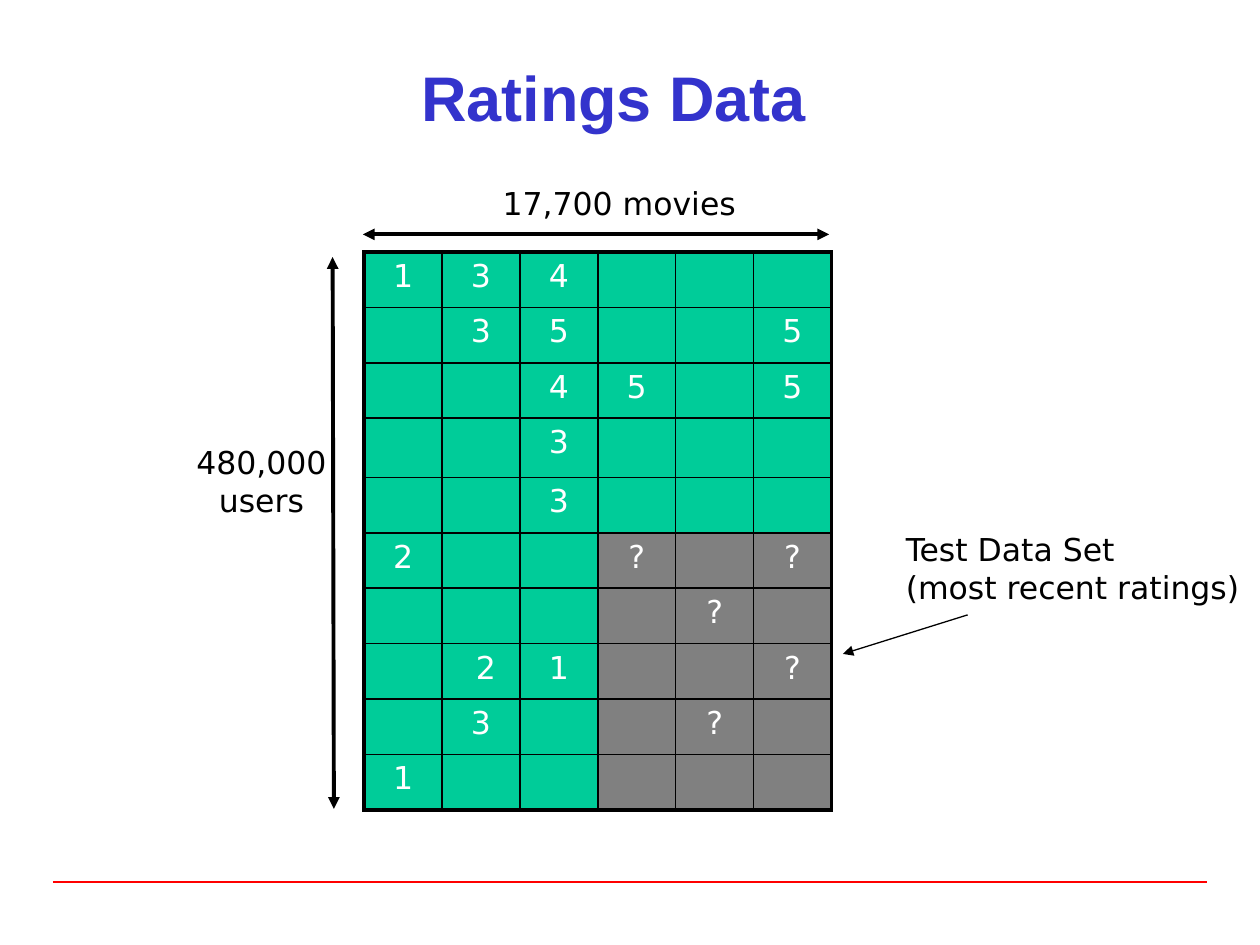
"""Build the ratings matrix slide."""
from dataclasses import dataclass

import pptx
import pptx.dml.color
import pptx.enum.shapes
import pptx.enum.text
import pptx.oxml
import pptx.oxml.ns
import pptx.util
from pptx.util import Inches

COLORS = {"title": "3333CC", "text": "000000", "rule": "FF0000",
          "known": "00CC99", "test": "808080", "rating": "FFFFFF"}
ALIGN = pptx.enum.text.PP_ALIGN
ANCHOR = pptx.enum.text.MSO_ANCHOR
RATINGS = [
    ["1", "3", "4", "", "", ""],
    ["", "3", "5", "", "", "5"],
    ["", "", "4", "5", "", "5"],
    ["", "", "3", "", "", ""],
    ["", "", "3", "", "", ""],
    ["2", "", "", "?", "", "?"],
    ["", "", "", "", "?", ""],
    ["", " 2", "1", "", "", "?"],
    ["", "3", "", "", "?", ""],
    ["1", "", "", "", "", ""],
]
TEST_ROW, TEST_COL = 5, 3
TALL_ROW = 3
THIN, THICK = 1, 2.25


@dataclass
class Label:
    """A text box with one paragraph per line."""
    lines: list[str]
    left: float
    top: float
    width: float
    height: float
    align: ALIGN = ALIGN.LEFT
    wrap: bool = False
    anchor: ANCHOR = ANCHOR.TOP
    font: str = "DejaVu Sans"
    size: float = 18
    color: str = "text"
    bold: bool = False


@dataclass
class Line:
    """A straight line with optional arrowheads."""
    start: tuple[float, float]
    end: tuple[float, float]
    width: float
    color: str = "text"
    ends: tuple[str, ...] = ()


LABELS = [
    Label(["Ratings Data"], 0.62, 0.43, 8.5, 0.67, ALIGN.CENTER, True,
          ANCHOR.MIDDLE, "Arial", 36, "title", True),
    Label(["Test Data Set", "(most recent ratings)"], 7.09, 4.16, 2.91, 0.71),
    Label(["480,000", "users"], 1.1, 3.47, 1.95, 0.7, ALIGN.CENTER, True),
    Label(["17,700 movies"], 3.89, 1.41, 2.08, 0.4),
]
RULE = Line((0.42, 7), (9.58, 7), 1, "rule")
ARROWS = [
    Line((2.64, 2.04), (2.65, 6.42), 2.25, ends=("headEnd", "tailEnd")),
    Line((2.88, 1.86), (6.58, 1.86), 2.25, ends=("headEnd", "tailEnd")),
    Line((7.68, 4.88), (6.69, 5.19), 0.75, ends=("tailEnd",)),
]


def rgb(name: str) -> pptx.dml.color.RGBColor:
    """Return the named colour."""
    return pptx.dml.color.RGBColor.from_string(COLORS[name])


def style_paragraph(p, font: str, size: float, color: str, bold: bool, align: ALIGN) -> None:
    """Set the font and alignment of a paragraph."""
    p.alignment = align
    p.font.name = font
    p.font.size = pptx.util.Pt(size)
    p.font.bold = bold
    p.font.color.rgb = rgb(color)


def draw_label(s, label: Label) -> None:
    """Add a text box."""
    sp = s.shapes.add_textbox(Inches(label.left), Inches(label.top),
                              Inches(label.width), Inches(label.height))
    tf = sp.text_frame
    tf.word_wrap = label.wrap
    tf.vertical_anchor = label.anchor
    tf.text = "\n".join(label.lines)
    for p in tf.paragraphs:
        style_paragraph(p, label.font, label.size, label.color, label.bold, label.align)


def draw_line(s, line: Line) -> None:
    """Add a connector with its arrowheads and no shadow."""
    sp = s.shapes.add_connector(pptx.enum.shapes.MSO_CONNECTOR.STRAIGHT,
                                *map(Inches, line.start + line.end))
    sp.line.width = pptx.util.Pt(line.width)
    sp.line.color.rgb = rgb(line.color)
    ln = sp.line._get_or_add_ln()
    for end in line.ends:
        ln.append(pptx.oxml.parse_xml(
            f'<a:{end} {pptx.oxml.ns.nsdecls("a")} type="triangle"/>'))
    sp._element.spPr.append(pptx.oxml.parse_xml(
        f'<a:effectLst {pptx.oxml.ns.nsdecls("a")}/>'))


def set_border(cell, side: str, width: float) -> None:
    """Add one border to a cell."""
    cell._tc.get_or_add_tcPr().append(pptx.oxml.parse_xml(
        f'<a:ln{side} {pptx.oxml.ns.nsdecls("a")} w="{pptx.util.Pt(width)}">'
        f'<a:solidFill><a:srgbClr val="{COLORS["text"]}"/></a:solidFill></a:ln{side}>'))


def draw_ratings(s) -> None:
    """Add the ratings table with its test block."""
    rows, cols = len(RATINGS), len(RATINGS[0])
    table = s.shapes.add_table(rows, cols, Inches(2.89), Inches(2),
                               Inches(3.71), Inches(4.4)).table
    table.first_row = table.horz_banding = False
    for col in table.columns:
        col.width = Inches(3.71 / cols)
    for i, values in enumerate(RATINGS):
        table.rows[i].height = Inches(0.47 if i == TALL_ROW else 0.44)
        for j, value in enumerate(values):
            cell = table.cell(i, j)
            outer = {"L": j == 0, "R": j == cols - 1, "T": i == 0, "B": i == rows - 1}
            for side, is_outer in outer.items():
                set_border(cell, side, THICK if is_outer else THIN)
            cell.fill.solid()
            is_test = i >= TEST_ROW and j >= TEST_COL
            cell.fill.fore_color.rgb = rgb("test" if is_test else "known")
            cell.text = value
            style_paragraph(cell.text_frame.paragraphs[0], "DejaVu Sans", 18,
                            "rating", False, ALIGN.CENTER)


def main() -> None:
    """Build and save the slide."""
    prs = pptx.Presentation()
    prs.slide_width, prs.slide_height = Inches(10), Inches(7.5)
    s = prs.slides.add_slide(prs.slide_layouts[6])
    draw_line(s, RULE)
    draw_ratings(s)
    for label in LABELS:
        draw_label(s, label)
    for arrow in ARROWS:
        draw_line(s, arrow)
    prs.save("out.pptx")


if __name__ == "__main__":
    main()
